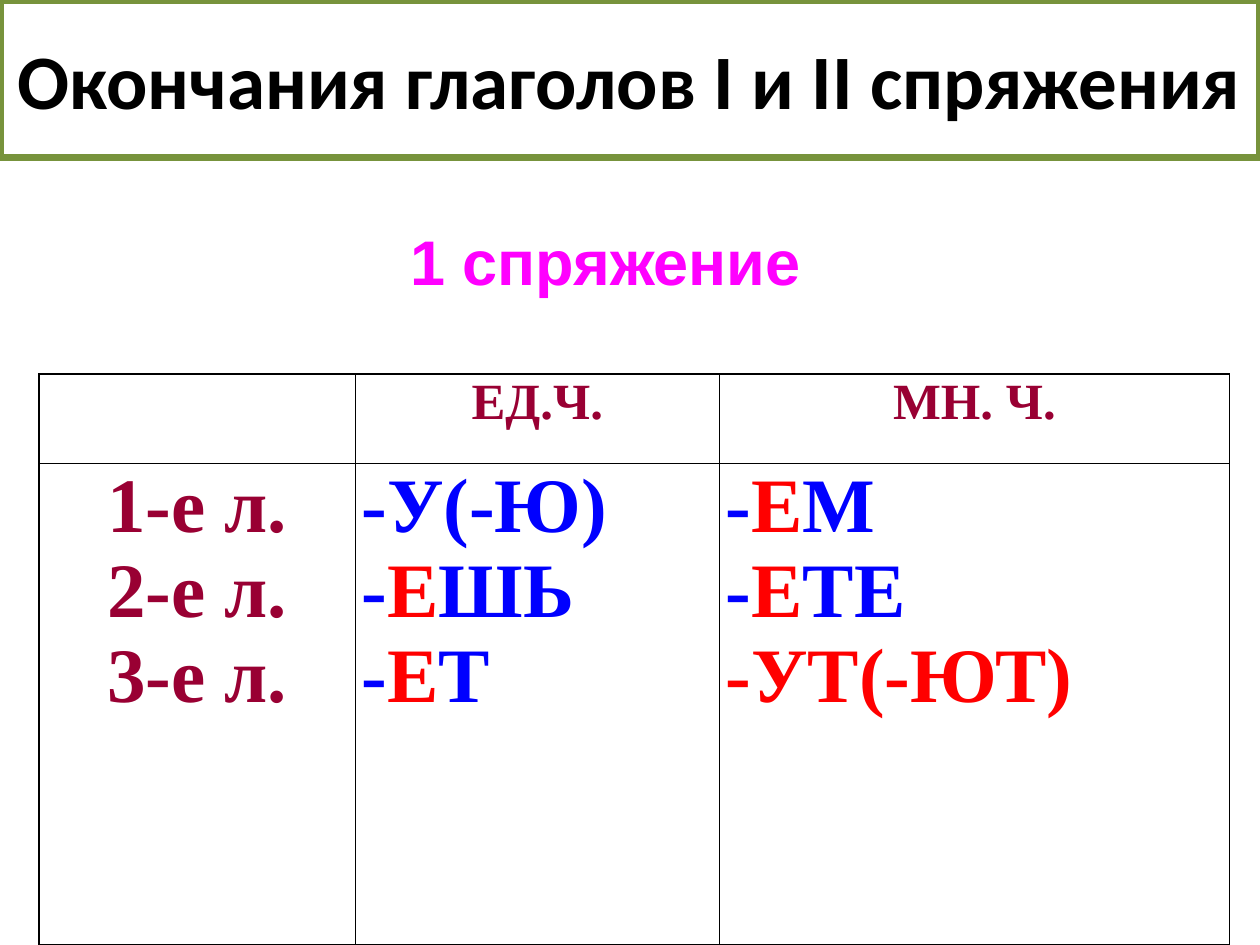
from dataclasses import dataclass

from lxml.etree import SubElement
from pptx import Presentation
from pptx.dml.color import RGBColor
from pptx.enum.shapes import MSO_SHAPE
from pptx.enum.text import MSO_ANCHOR, PP_ALIGN
from pptx.oxml.ns import qn
from pptx.util import Inches, Pt


@dataclass(frozen=True)
class Theme:
    black: str = "000000"
    white: str = "FFFFFF"
    frame: str = "77933C"
    magenta: str = "FF00FF"
    label: str = "990033"
    ending: str = "0000FF"
    stress: str = "FF0000"
    heading_font: str = "Calibri"
    subtitle_font: str = "Arial"
    table_font: str = "Times New Roman"
    large: int = 44
    medium: int = 36
    small: int = 29
    frame_width: float = 4.5
    border_width: float = 1


THEME = Theme()
WIDTH, HEIGHT = 10, 7.5

TITLE = "Окончания глаголов I и II спряжения"
SUBTITLE = "1 спряжение"
HEADERS = ["", "ЕД.Ч.", "МН. Ч."]
PERSONS = ["1-е л.", "2-е л.", "3-е л."]
# Letters between asterisks are stressed.
SINGULAR = ["-У(-Ю)", "-*Е*ШЬ", "-*Е*Т"]
PLURAL = ["-*Е*М", "-*Е*ТЕ", "*-УТ(-ЮТ)*"]

TITLE_AREA = (0, 0, WIDTH, HEIGHT / 6)
SUBTITLE_AREA = (0.78, 1.72, 8.05, 1.33)
TABLE_LEFT, TABLE_TOP = 0.31, 2.97
COLUMN_WIDTHS = [2.51, 2.89, 4.05]
ROW_HEIGHTS = [0.71, 3.82]


def color(value):
    return RGBColor.from_string(value)


def inches(area):
    return [Inches(length) for length in area]


def write(frame, lines, font, size, ink, align=PP_ALIGN.LEFT):
    """Write one paragraph per line; parts between asterisks are stressed."""
    for row, line in enumerate(lines):
        para = frame.paragraphs[0] if row == 0 else frame.add_paragraph()
        para.alignment = align
        for index, text in enumerate(line.split("*")):
            if text:
                span = para.add_run()
                span.text = text
                span.font.name = font
                span.font.size = Pt(size)
                span.font.bold = True
                span.font.color.rgb = color(THEME.stress if index % 2 else ink)


def add_borders(cell):
    properties = cell._tc.get_or_add_tcPr()
    for position, side in enumerate(("lnL", "lnR", "lnT", "lnB")):
        line = properties.makeelement(
            qn(f"a:{side}"), {"w": str(Pt(THEME.border_width))})
        fill = SubElement(line, qn("a:solidFill"))
        SubElement(fill, qn("a:srgbClr"), val=THEME.black)
        properties.insert(position, line)


def add_title(page):
    box = page.shapes.add_shape(MSO_SHAPE.RECTANGLE, *inches(TITLE_AREA))
    box.shadow.inherit = False
    box.fill.background()
    box.line.color.rgb = color(THEME.frame)
    box.line.width = Pt(THEME.frame_width)
    box.text_frame.word_wrap = True
    box.text_frame.vertical_anchor = MSO_ANCHOR.MIDDLE
    write(box.text_frame, [TITLE], font=THEME.heading_font, size=THEME.large,
          ink=THEME.black, align=PP_ALIGN.CENTER)


def add_subtitle(page):
    box = page.shapes.add_textbox(*inches(SUBTITLE_AREA))
    box.text_frame.word_wrap = True
    write(box.text_frame, [SUBTITLE], font=THEME.subtitle_font,
          size=THEME.medium, ink=THEME.magenta, align=PP_ALIGN.CENTER)


def add_endings_table(page):
    area = (TABLE_LEFT, TABLE_TOP, sum(COLUMN_WIDTHS), sum(ROW_HEIGHTS))
    rows = [[[header] for header in HEADERS], [PERSONS, SINGULAR, PLURAL]]
    table = page.shapes.add_table(
        len(rows), len(HEADERS), *inches(area)).table
    for column, width in zip(table.columns, COLUMN_WIDTHS):
        column.width = Inches(width)
    for row, height in zip(table.rows, ROW_HEIGHTS):
        row.height = Inches(height)

    for r, row in enumerate(rows):
        for c, lines in enumerate(row):
            cell = table.cell(r, c)
            cell.margin_left = cell.margin_right = Inches(0.05)
            cell.margin_top = cell.margin_bottom = 0
            cell.fill.solid()
            cell.fill.fore_color.rgb = color(THEME.white)
            add_borders(cell)
            is_label = r == 0 or c == 0
            write(cell.text_frame, lines, font=THEME.table_font,
                  size=THEME.small if r == 0 else THEME.large,
                  ink=THEME.label if is_label else THEME.ending,
                  align=PP_ALIGN.CENTER if is_label else PP_ALIGN.LEFT)


def main():
    deck = Presentation()
    deck.slide_width, deck.slide_height = inches((WIDTH, HEIGHT))
    page = deck.slides.add_slide(deck.slide_layouts[6])
    add_title(page)
    add_subtitle(page)
    add_endings_table(page)
    deck.save("out.pptx")


if __name__ == "__main__":
    main()
